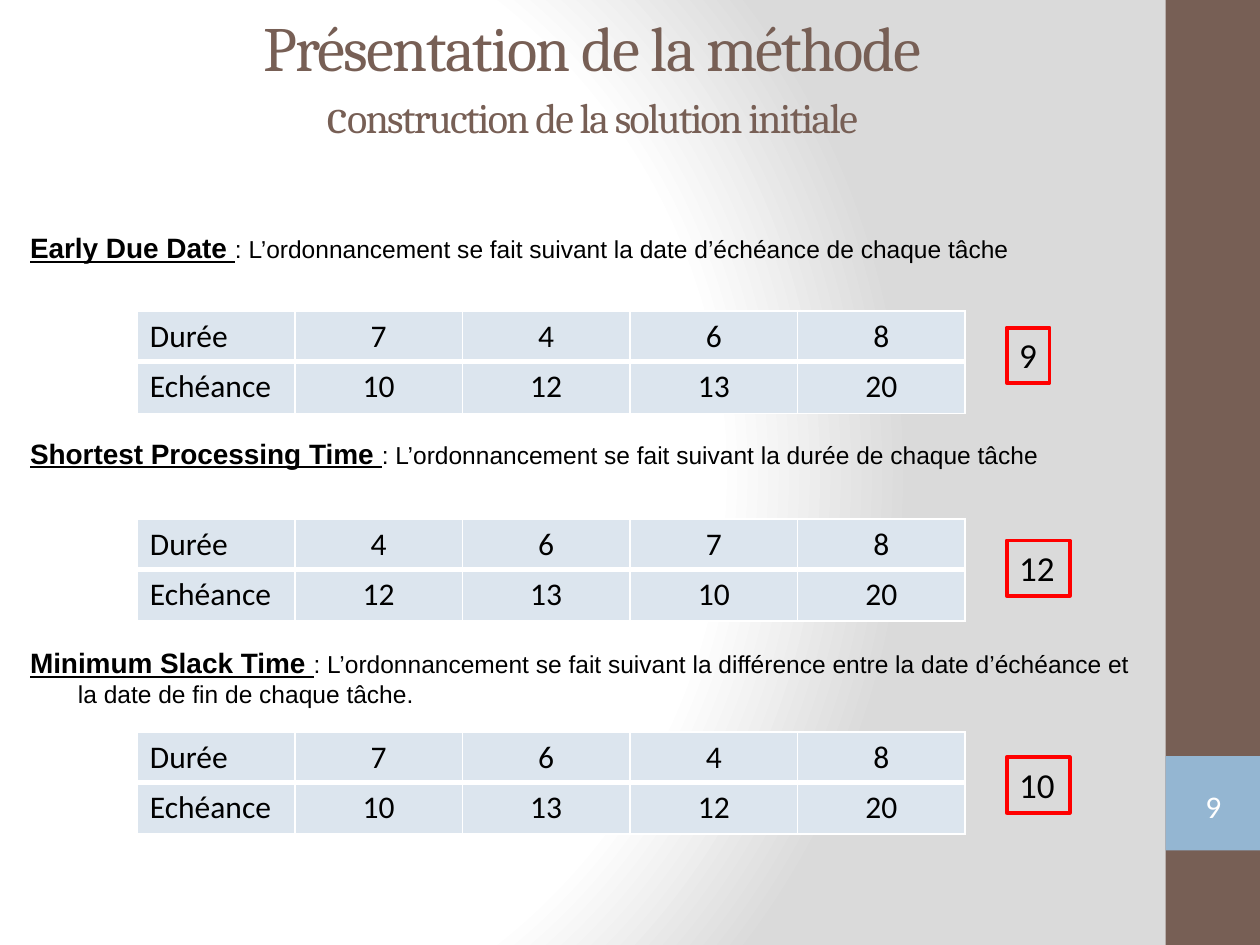
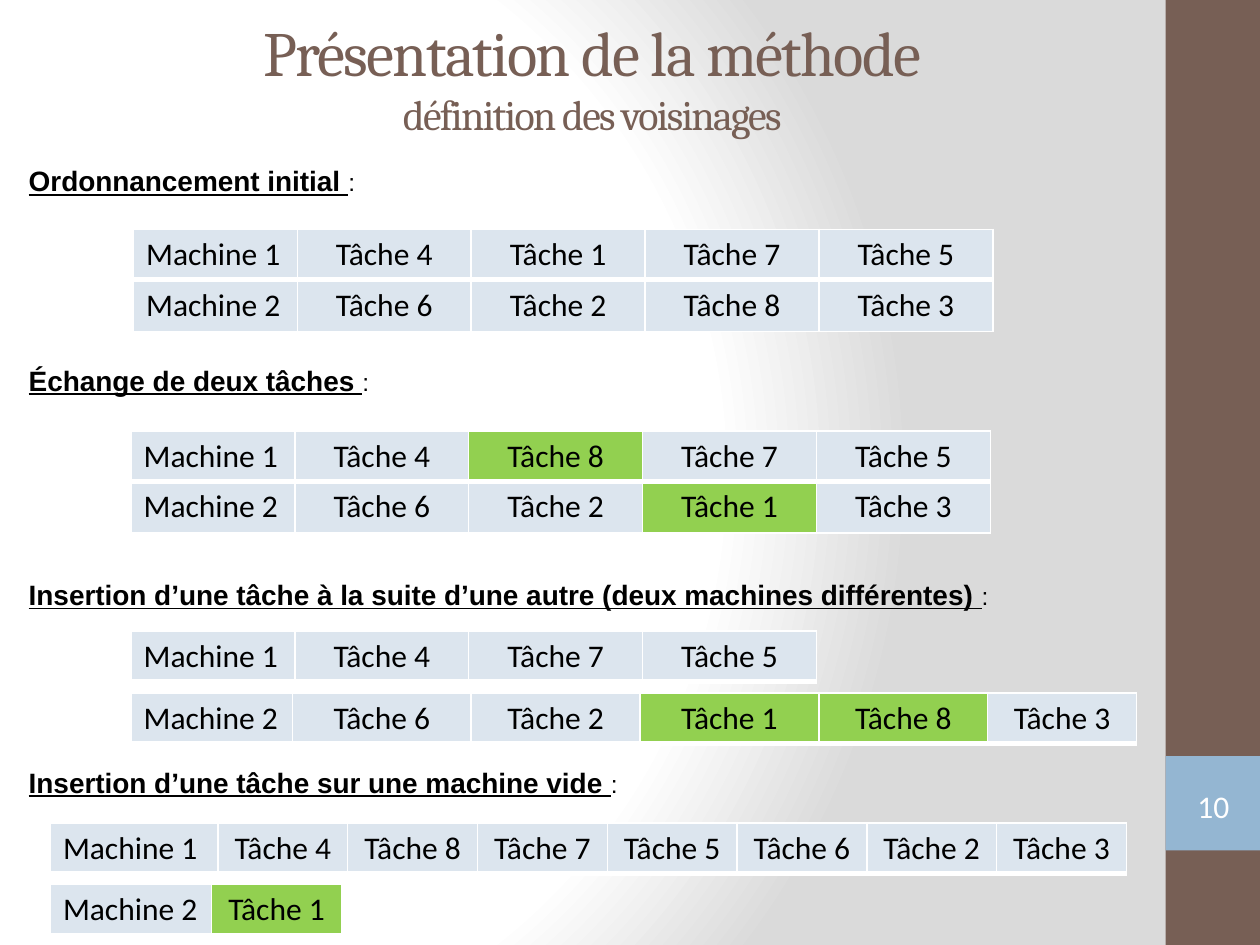
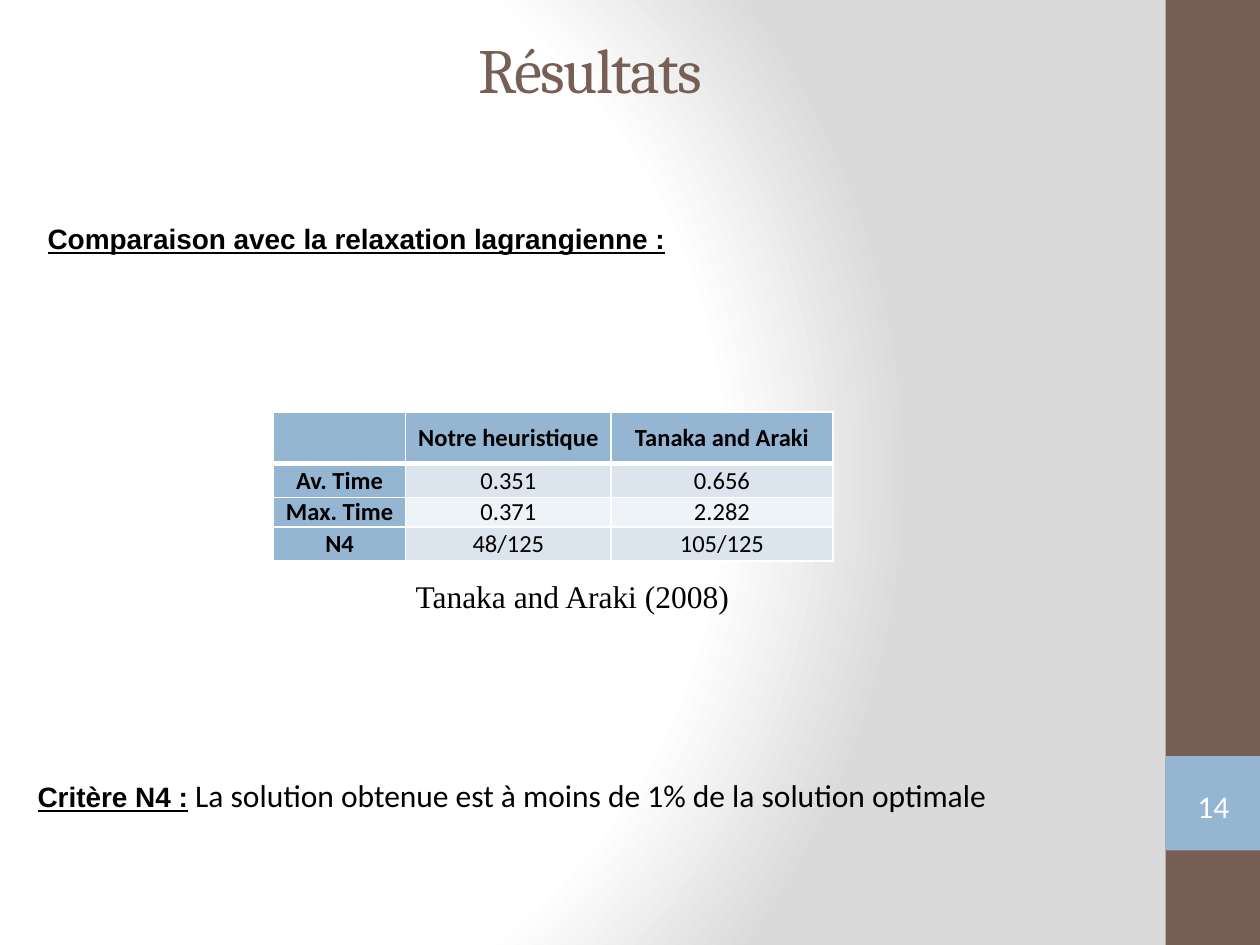
import pptx
import pptx.dml.color
import pptx.enum.shapes
import pptx.enum.text
import pptx.oxml
import pptx.oxml.ns
import pptx.util
from pptx.util import Inches

BROWN, BLUE, PALE, PALER = "775F55", "94B6D2", "DCE5EE", "EEF3F7"
GREEN, RED, WHITE, BLACK = "92D050", "FF0000", "FFFFFF", "000000"
ALIGN = pptx.enum.text.PP_ALIGN
MIDDLE = pptx.enum.text.MSO_ANCHOR.MIDDLE
AUTO_SIZE = pptx.enum.text.MSO_AUTO_SIZE
SHAPE = pptx.enum.shapes.MSO_SHAPE
NS = pptx.oxml.ns.nsdecls("a")
TITLE_BOX = (-0.16, -0.02, 9.72, 1.25)


# ---- shared helpers ----
def rgb(value):
    return pptx.dml.color.RGBColor.from_string(value)


def inches(box):
    return [Inches(length) for length in box]


def set_font(font, name, size, color=BLACK, bold=None):
    font.name = name
    font.size = pptx.util.Pt(size)
    font.color.rgb = rgb(color)
    font.bold = bold


def add_band(slide, box, color):
    band = slide.shapes.add_shape(SHAPE.RECTANGLE, *inches(box))
    band.shadow.inherit = False
    band.fill.solid()
    band.fill.fore_color.rgb = rgb(color)
    band.line.fill.background()
    return band


def add_text_box(slide, box, wrap=True):
    text_box = slide.shapes.add_textbox(*inches(box))
    text_box.text_frame.word_wrap = wrap
    text_box.text_frame.auto_size = AUTO_SIZE.SHAPE_TO_FIT_TEXT
    return text_box


def add_caption(slide, box, term, rest="", wrap=True, rest_font=("Arial", 14)):
    """Underlined bold term, followed by its plain explanation."""
    frame = add_text_box(slide, box, wrap).text_frame
    frame.vertical_anchor = MIDDLE
    paragraph = frame.paragraphs[0]
    set_font(paragraph.font, *rest_font)
    term_run = paragraph.add_run()
    term_run.text = term
    set_font(term_run.font, "Arial", 16, bold=True)
    term_run.font.underline = True
    if rest:
        paragraph.add_run().text = rest
    return paragraph


def set_borders(cell, bottom):
    """White cell borders; must precede the fill in the cell properties."""
    properties = cell._tc.get_or_add_tcPr()
    for side, points in (("L", 1), ("R", 1), ("T", 1), ("B", bottom)):
        properties.append(pptx.oxml.parse_xml(
            f'<a:ln{side} {NS} w="{points * 12700}"><a:solidFill>'
            f'<a:srgbClr val="{WHITE}"/></a:solidFill></a:ln{side}>'))


def add_grid(slide, left, top, widths, heights, rows, fill_of, size=18,
             headed=False):
    """Table with white rules, the one under the first row being thicker."""
    table = slide.shapes.add_table(
        len(rows), len(widths),
        *inches((left, top, sum(widths), sum(heights)))).table
    table.first_row = table.horz_banding = False
    for column, width in zip(table.columns, widths):
        column.width = Inches(width)
    for r, (row, values) in enumerate(zip(table.rows, rows)):
        row.height = Inches(heights[r])
        for c, value in enumerate(values):
            cell = table.cell(r, c)
            set_borders(cell, 1 if r else 3)
            cell.fill.solid()
            cell.fill.fore_color.rgb = rgb(fill_of(r, c))
            if headed:
                cell.vertical_anchor = MIDDLE
                cell.margin_left = cell.margin_right = Inches(0.07)
                cell.margin_top = cell.margin_bottom = 0
            cell.text = value
            paragraph = cell.text_frame.paragraphs[0]
            set_font(paragraph.font, "Calibri", size,
                     bold=headed and (r == 0 or c == 0))
            if c or headed:
                paragraph.alignment = ALIGN.CENTER


# ---- frame common to all slides ----
def build_master(prs, slide):
    """Put the background gradient and the side bands on the master."""
    master = prs.slide_master
    master.background.fill.solid()
    plain = master.element.find(".//" + pptx.oxml.ns.qn("p:bgPr"))[0]
    stops = "".join(
        f'<a:gs pos="{percent * 1000}"><a:srgbClr val="{color}"/></a:gs>'
        for percent, color in ((0, WHITE), (75, WHITE), (100, "DADADA")))
    plain.getparent().replace(plain, pptx.oxml.parse_xml(
        f'<a:gradFill {NS} rotWithShape="1"><a:gsLst>{stops}</a:gsLst>'
        '<a:path path="circle"><a:fillToRect l="20000" t="50000" r="100000" '
        'b="50000"/></a:path></a:gradFill>'))
    side_band = add_band(slide, (9.25, 0, 0.75, 7.5), BROWN)
    number_band = add_band(slide, (9.25, 6, 0.75, 0.75), BLUE)
    for position, band in enumerate((side_band, number_band), start=2):
        master.element.cSld.spTree.insert(position, band.element)


def add_title(slide, box, title, *subtitle):
    """Subtitle parts are (text, size) pairs on a second line."""
    placeholder = slide.shapes.title
    (placeholder.left, placeholder.top,
     placeholder.width, placeholder.height) = inches(box)
    frame = placeholder.text_frame
    frame.auto_size = AUTO_SIZE.NONE
    frame.vertical_anchor = MIDDLE
    paragraph = frame.paragraphs[0]
    paragraph.alignment = ALIGN.CENTER
    set_font(paragraph.font, "Cambria", 36, BROWN)
    paragraph.add_run().text = title
    if subtitle:
        paragraph.add_line_break()
    for text, size in subtitle:
        run = paragraph.add_run()
        run.text = text
        run.font.size = pptx.util.Pt(size)
    for run in paragraph.runs:
        run._r.get_or_add_rPr().set("spc", "-100")


def add_page_number(slide, number):
    page = slide.shapes.add_shape(SHAPE.DOUBLE_BRACKET,
                                  *inches((9.33, 6.18, 0.6, 0.43)))
    page.shadow.inherit = False
    page.fill.background()
    page.line.fill.background()
    frame = page.text_frame
    frame.margin_left = frame.margin_right = 0
    frame.margin_top = frame.margin_bottom = 0
    frame.vertical_anchor = MIDDLE
    paragraph = frame.paragraphs[0]
    paragraph.text = str(number)
    paragraph.alignment = ALIGN.CENTER
    set_font(paragraph.font, "Calibri", 18, WHITE)


# ---- initial solution ----
def add_priority_rule(slide, box, table_top, score_top, name, criterion,
                      tasks, score):
    left, top, width, height = box
    caption = add_caption(slide, box, name + " ",
                          ": L’ordonnancement se fait suivant " + criterion)
    indent = caption._p.get_or_add_pPr()
    indent.set("marL", str(Inches(0.38)))
    indent.set("indent", str(-Inches(0.38)))
    durations, due_dates = zip(*tasks)
    add_grid(slide, left + 0.95, table_top, [1.25] + [1.33] * 4, [0.4, 0.41],
             [("Durée", *durations), ("Echéance", *due_dates)],
             lambda r, c: PALE)
    score_box = add_text_box(
        slide, (left + 7.85, score_top, 0.18 + 0.16 * len(score), 0.44), False)
    score_box.line.color.rgb = rgb(RED)
    score_box.line.width = pptx.util.Pt(2.25)
    paragraph = score_box.text_frame.paragraphs[0]
    paragraph.text = score
    set_font(paragraph.font, "Calibri", 20)


def build_initial_solution(slide):
    add_title(slide, TITLE_BOX, "Présentation de la méthode",
              ("c", 28), ("onstruction de la solution initiale", 24))
    a, b, c, d = ("7", "10"), ("4", "12"), ("6", "13"), ("8", "20")
    rules = [
        (1.78, 0.37, 2.47, 2.6, "Early Due Date",
         "la date d’échéance de chaque tâche", (a, b, c, d), "9"),
        (3.41, 0.37, 4.12, 4.29, "Shortest Processing Time",
         "la durée de chaque tâche", (b, c, a, d), "12"),
        (5.07, 0.61, 5.81, 6.01, "Minimum Slack Time",
         "la différence entre la date d’échéance et la date de fin de chaque "
         "tâche.", (a, c, b, d), "10"),
    ]
    for top, height, *rule in rules:
        add_priority_rule(slide, (0.14, top, 9.06, height), *rule)


# ---- neighbourhoods ----
def add_schedule(slide, left, top, widths, machines, moved=()):
    """machines maps a machine number to its tasks; moved tasks are green."""
    rows = [(f"Machine {machine}", *(f"Tâche {task}" for task in tasks))
            for machine, tasks in machines.items()]
    green = {f"Tâche {task}" for task in moved}
    add_grid(slide, left, top, widths, [0.4, 0.41][:len(rows)], rows,
             lambda r, c: GREEN if rows[r][c] in green else PALE)


def build_neighbourhoods(slide):
    add_title(slide, TITLE_BOX, "Présentation de la méthode",
              ("définition des voisinages", 24))
    captions = [
        (1.25, "Ordonnancement initial "),
        (2.83, "Échange de deux tâches "),
        (4.53, "Insertion d’une tâche à la suite d’une autre "
               "(deux machines différentes) "),
        (6.02, "Insertion d’une tâche sur une machine vide "),
    ]
    for top, term in captions:
        add_caption(slide, (0.13, top, 9.06, 0.37), term, ":")
    even = [1.3] + [1.38] * 4
    schedules = [
        (1.06, 1.82, even, {1: (4, 1, 7, 5), 2: (6, 2, 8, 3)}),
        (1.04, 3.42, even, {1: (4, 8, 7, 5), 2: (6, 2, 1, 3)}, (1, 8)),
        (1.04, 5.01, even[:4], {1: (4, 7, 5)}),
        (1.04, 5.5, [1.28, 1.42, 1.34, 1.42, 1.34, 1.18],
         {2: (6, 2, 1, 8, 3)}, (1, 8)),
        (0.4, 6.53, [1.33] + [1.03] * 7, {1: (4, 8, 7, 5, 6, 2, 3)}),
        (0.4, 7.02, [1.28, 1.03], {2: (1,)}, (1,)),
    ]
    for schedule in schedules:
        add_schedule(slide, *schedule)


# ---- results ----
def build_results(slide):
    add_title(slide, (0.52, 0.13, 8.33, 0.82), "Résultats")
    add_caption(slide, (0.28, 1.71, 5.23, 0.37),
                "Comparaison avec la relaxation lagrangienne :", wrap=False)
    results = [("", "Notre heuristique", "Tanaka and Araki"),
               ("Av. Time", "0.351", "0.656"),
               ("Max. Time", "0.371", "2.282"),
               ("N4", "48/125", "105/125")]
    add_grid(slide, 2.17, 3.27, [1.05, 1.63, 1.76], [0.41, 0.27, 0.23, 0.27],
             results,
             lambda r, c: BLUE if r == 0 or c == 0 else PALE if r % 2 else PALER,
             size=14, headed=True)
    reference = add_text_box(slide, (3.2, 4.53, 2.72, 0.4), False)
    paragraph = reference.text_frame.paragraphs[0]
    paragraph.text = "Tanaka and Araki (2008)"
    set_font(paragraph.font, "Times New Roman", 18)
    add_caption(slide, (0.2, 6.11, 7.84, 0.4), "Critère N4 :",
                " La solution obtenue est à moins de 1% de la solution optimale",
                wrap=False, rest_font=("Calibri", 18))


def main():
    prs = pptx.Presentation()
    prs.slide_width, prs.slide_height = Inches(10), Inches(7.5)
    title_only = prs.slide_layouts[5]
    pages = {9: build_initial_solution, 10: build_neighbourhoods,
             14: build_results}
    for number, build in pages.items():
        slide = prs.slides.add_slide(title_only)
        build(slide)
        add_page_number(slide, number)
    build_master(prs, prs.slides[0])
    prs.save("out.pptx")


if __name__ == "__main__":
    main()
